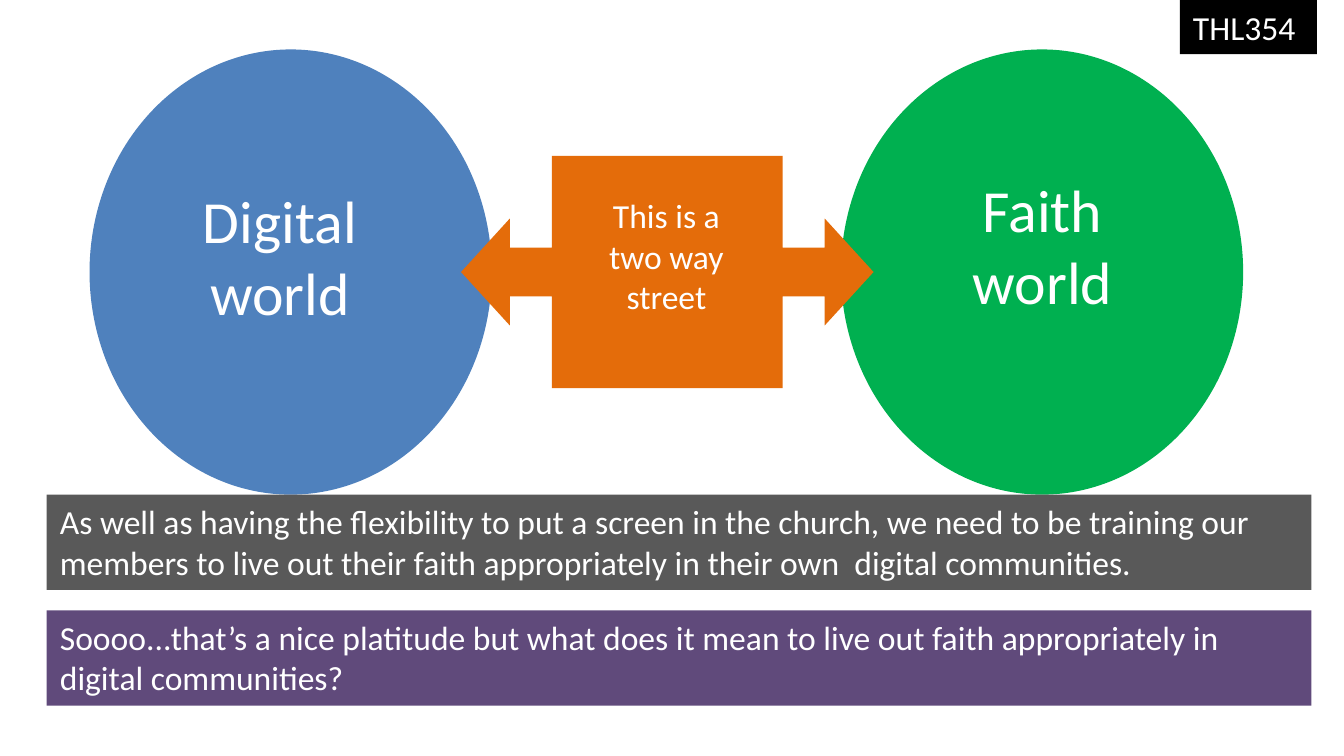
from dataclasses import dataclass

from pptx import Presentation
from pptx import util as u
from pptx.dml.color import RGBColor
from pptx.enum import shapes, text

HUES = {
    "black": "000000",
    "white": "FFFFFF",
    "blue": "4F81BD",
    "green": "00B050",
    "orange": "E46C0A",
    "grey": "595959",
    "purple": "604A7B",
}
KIND = shapes.MSO_SHAPE
ALIGN = text.PP_ALIGN


@dataclass
class Box:
    left: float
    top: float
    width: float
    height: float

    def pts(self) -> list:
        return [u.Pt(n) for n in (self.left, self.top, self.width, self.height)]


@dataclass
class World:
    name: str
    hue: str
    left: float
    label: Box


@dataclass
class Band:
    words: str
    hue: str
    box: Box


WORLDS = [
    World("Digital world", "blue", 48, Box(82, 95, 136, 85)),
    World("Faith world", "green", 450.5, Box(490.5, 89, 136, 85)),
]
BANDS = [
    Band("THL354", "black", Box(632, 0, 73.5, 29)),
    Band("As well as having the flexibility to put a screen in the church, "
         "we need to be training our members to live out their faith "
         "appropriately in their own  digital communities.",
         "grey", Box(25, 265, 677.5, 51)),
    Band("Soooo...that’s a nice platitude but what does it mean to live out "
         "faith appropriately in digital communities?",
         "purple", Box(25, 327, 677.5, 51)),
]


def add_form(slide, kind, box: Box, hue: str):
    form = slide.shapes.add_shape(kind, *box.pts())
    form.shadow.inherit = False
    form.fill.solid()
    form.fill.fore_color.rgb = RGBColor.from_string(HUES[hue])
    form.line.fill.background()
    return form


def write(form, words: str, size: float, align) -> None:
    frame = form.text_frame
    frame.word_wrap = True
    frame.vertical_anchor = text.MSO_ANCHOR.TOP
    par = frame.paragraphs[0]
    par.text = words
    par.alignment = align
    par.font.name = "Calibri"
    par.font.size = u.Pt(size)
    par.font.color.rgb = RGBColor.from_string(HUES["white"])


def add_label(slide, words: str, box: Box, size: float) -> None:
    write(slide.shapes.add_textbox(*box.pts()), words, size, ALIGN.CENTER)


def add_band(slide, band: Band) -> None:
    form = add_form(slide, KIND.RECTANGLE, band.box, band.hue)
    write(form, band.words, 18, ALIGN.LEFT)


def main() -> None:
    deck = Presentation()
    deck.slide_width, deck.slide_height = u.Pt(720), u.Pt(405)
    slide = deck.slides.add_slide(deck.slide_layouts[6])

    code, *notes = BANDS
    add_band(slide, code)
    for world in WORLDS:
        add_form(slide, KIND.OVAL, Box(world.left, 26.5, 215.5, 238.5), world.hue)
    for world in WORLDS:
        add_label(slide, world.name, world.label, 32)

    street = add_form(slide, KIND.LEFT_RIGHT_ARROW_CALLOUT,
                      Box(247, 83.5, 221, 124.5), "orange")
    for i, ratio in enumerate((0.21, 0.23, 0.21, 0.56)):
        street.adjustments[i] = ratio
    add_label(slide, "This is a two way street", Box(314.5, 101, 85, 73), 18)

    for note in notes:
        add_band(slide, note)
    deck.save("out.pptx")


if __name__ == "__main__":
    main()
